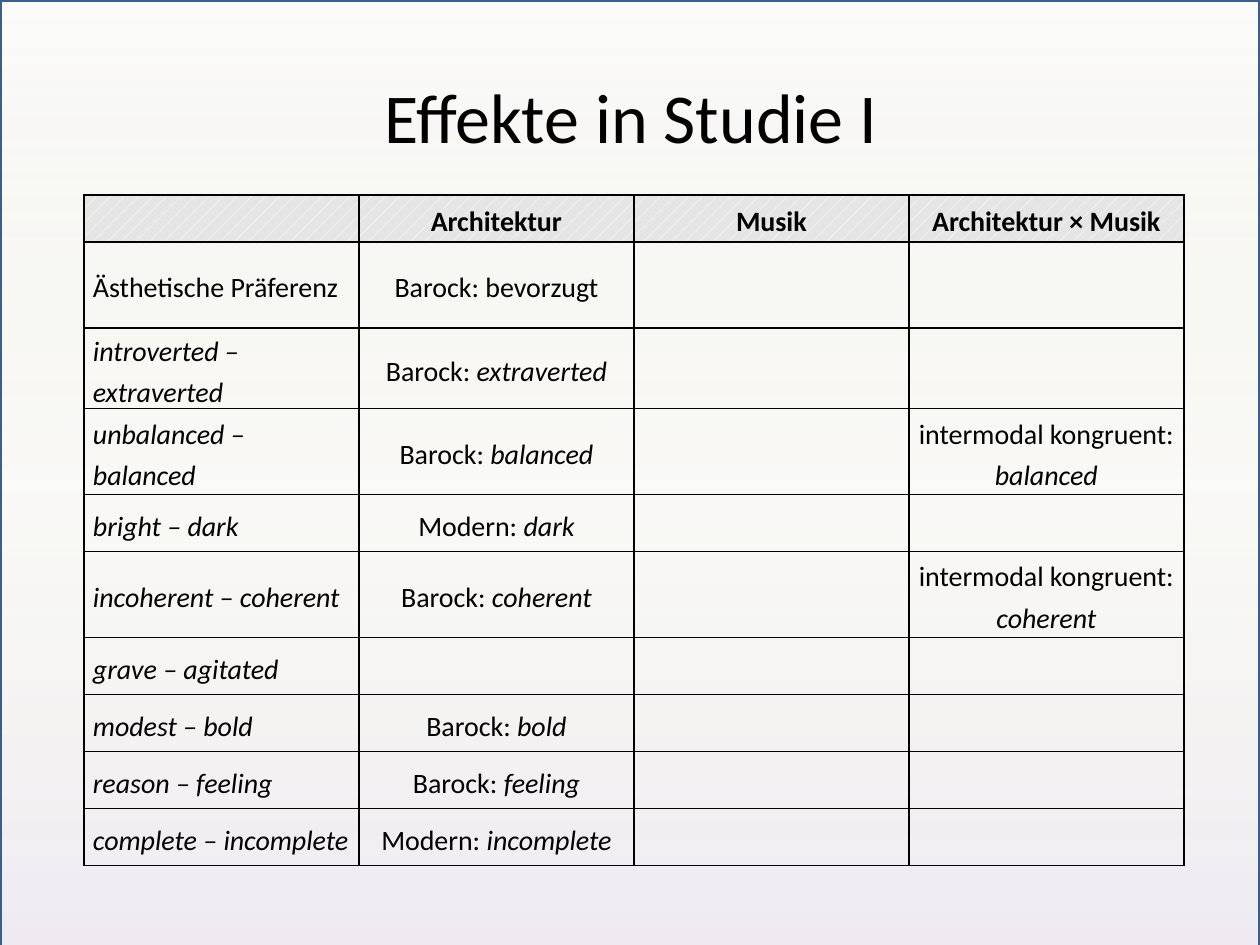
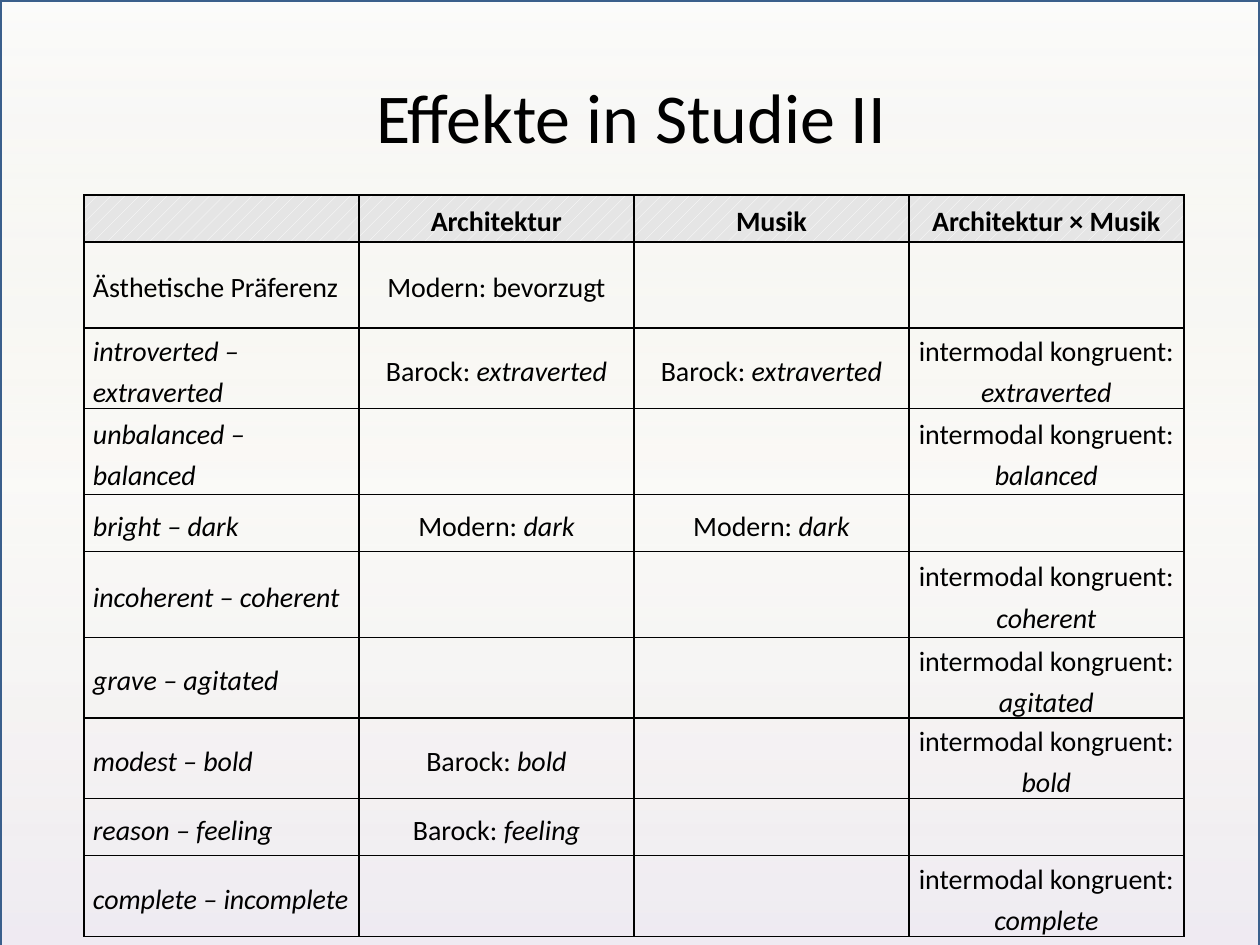
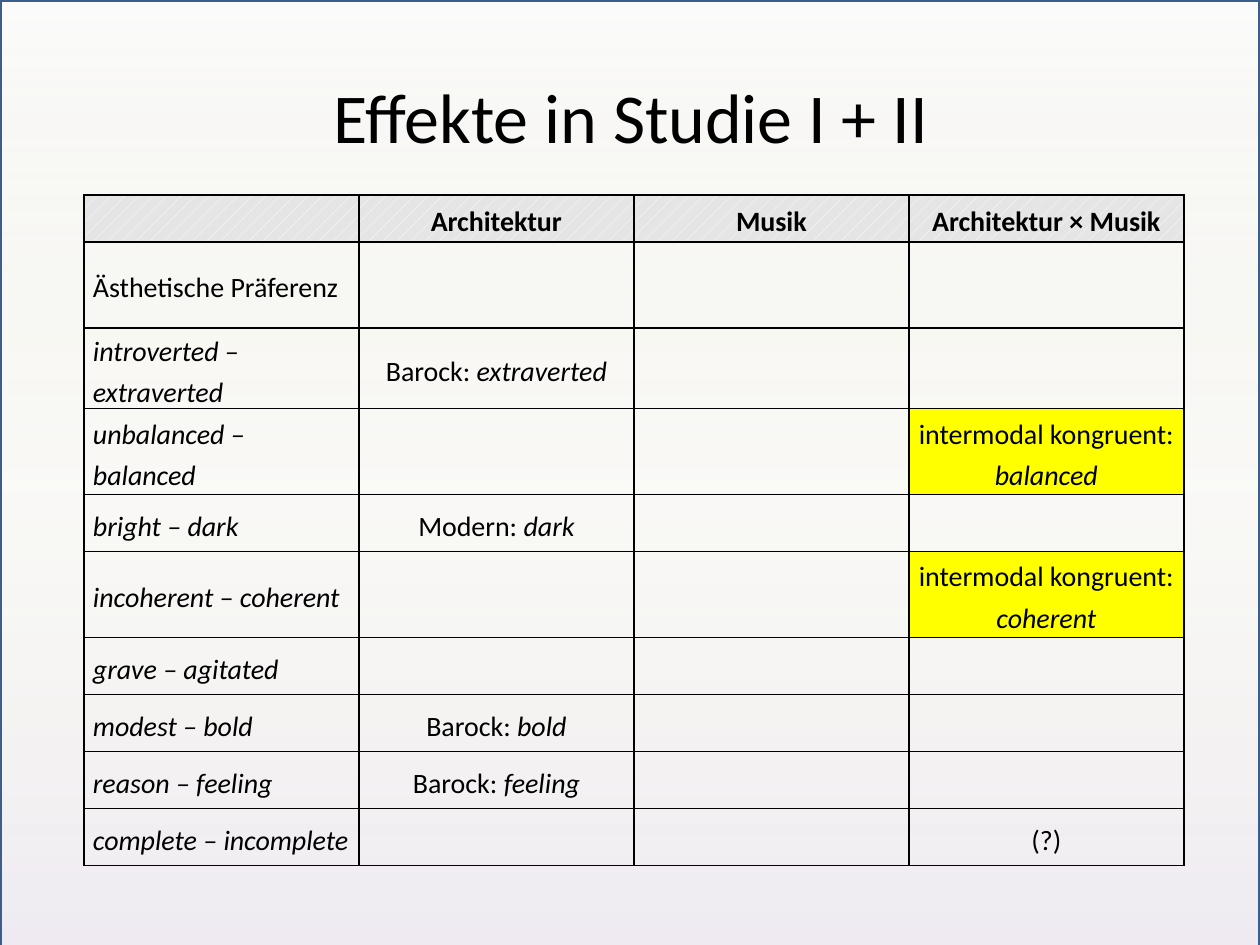
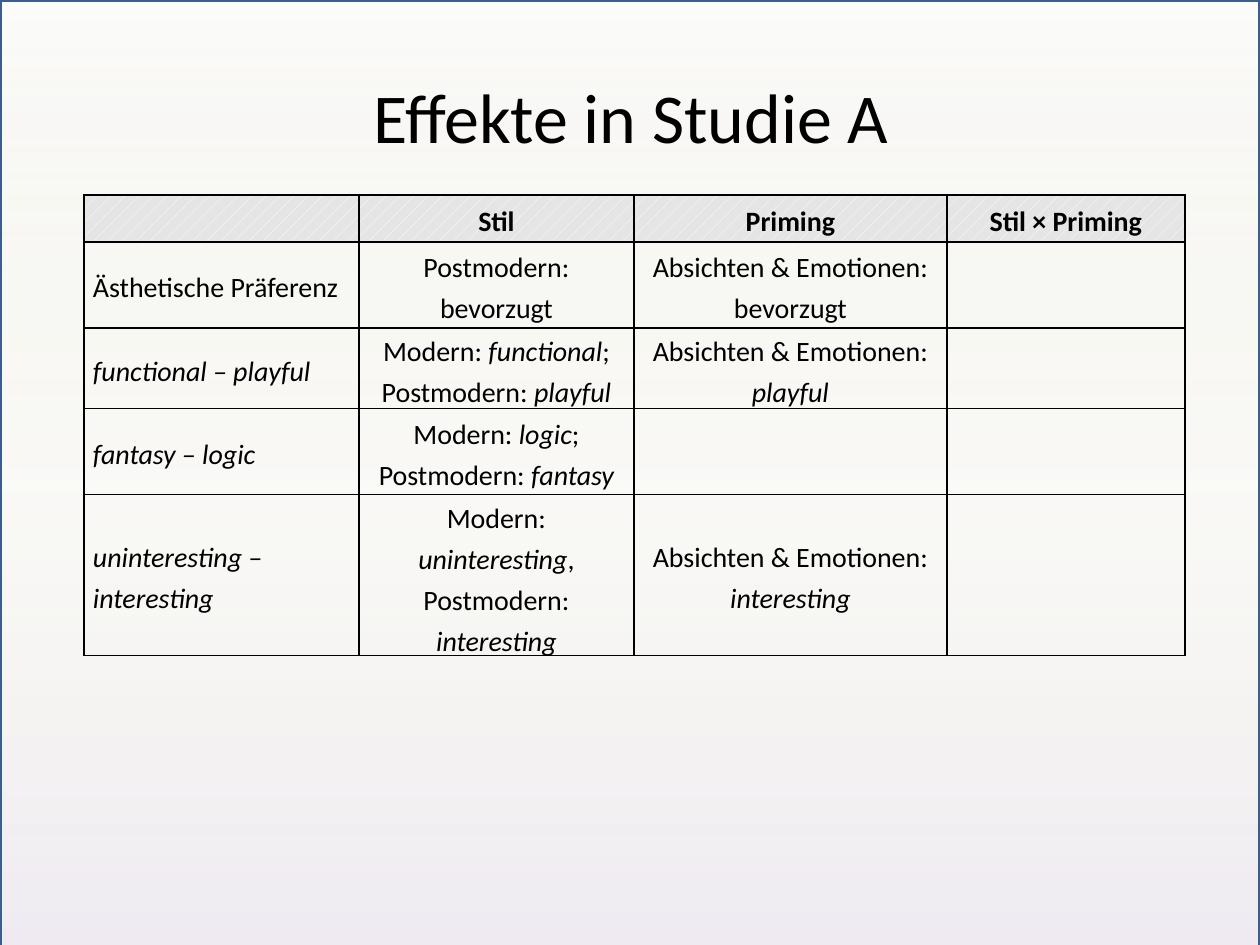
from itertools import product

from pptx import Presentation
from pptx.dml.color import RGBColor
from pptx.enum.dml import MSO_PATTERN
from pptx.enum.shapes import MSO_SHAPE
from pptx.enum.text import MSO_ANCHOR, PP_ALIGN
from pptx.oxml import parse_xml
from pptx.oxml.ns import nsdecls
from pptx.util import Pt

SCALE = 914400 / 126  # EMU per px
FONT = "Calibri"
HEX = {
    "ink": "000000", "frame": "3A5F8C", "head": "E5E5E5", "hatch": "FFFFFF",
    "mark": "FFFF00", "top": "F2F2F2", "mid": "C4BD97", "low": "B3A2C7",
}
# Position, colour and opacity of the backdrop, in percent
STOPS = [(0, "top", 30), (50, "mid", 7), (100, "low", 22)]

PAGE = (0, 0, 1260, 945)
BACK = (0, 0, 1260, 969)
TITLE = (144, 37, 974, 157)
GRID = (84, 195)
EVEN = [275] * 4
WIDE = [275, 275, 313, 238]
HEAD, TALL, LOW = 47, 86, 57

# Text between asterisks is italic
MUSIC = ["", "Architektur", "Musik", "Architektur × Musik"]
STYLE = ["", "Stil", "Priming", "Stil × Priming"]
SCALES = [
    "Ästhetische Präferenz", "*introverted – extraverted*",
    "*unbalanced – balanced*", "*bright – dark*", "*incoherent – coherent*",
    "*grave – agitated*", "*modest – bold*", "*reason – feeling*",
    "*complete – incomplete*",
]
BOTH = "intermodal kongruent: "
AIMS = "Absichten & Emotionen: "

# Effects by row number, then by column number
ONE = {
    1: {1: "Barock: bevorzugt"},
    2: {1: "Barock: *extraverted*"},
    3: {1: "Barock: *balanced*", 3: BOTH + "*balanced*"},
    4: {1: "Modern: *dark*"},
    5: {1: "Barock: *coherent*", 3: BOTH + "*coherent*"},
    7: {1: "Barock: *bold*"},
    8: {1: "Barock: *feeling*"},
    9: {1: "Modern: *incomplete*"},
}
TWO = {
    1: {1: "Modern: bevorzugt"},
    2: {1: "Barock: *extraverted*", 2: "Barock: *extraverted*",
        3: BOTH + "*extraverted*"},
    3: {3: BOTH + "*balanced*"},
    4: {1: "Modern: *dark*", 2: "Modern: *dark*"},
    5: {3: BOTH + "*coherent*"},
    6: {3: BOTH + "*agitated*"},
    7: {1: "Barock: *bold*", 3: BOTH + "*bold*"},
    8: {1: "Barock: *feeling*"},
    9: {3: BOTH + "*complete*"},
}
JOINT = {
    2: {1: "Barock: *extraverted*"},
    3: {3: BOTH + "*balanced*"},
    4: {1: "Modern: *dark*"},
    5: {3: BOTH + "*coherent*"},
    7: {1: "Barock: *bold*"},
    8: {1: "Barock: *feeling*"},
    9: {3: "(?)"},
}
PRIME = {
    1: {1: "Postmodern: bevorzugt", 2: AIMS + "bevorzugt"},
    2: {1: "Modern: *functional*; Postmodern: *playful*", 2: AIMS + "*playful*"},
    3: {1: "Modern: *logic*; Postmodern: *fantasy*"},
    4: {1: "Modern: *uninteresting*, Postmodern: *interesting*",
        2: AIMS + "*interesting*"},
}
MOODS = ["Ästhetische Präferenz", "*functional – playful*",
         "*fantasy – logic*", "*uninteresting – interesting*"]

# Title, heads, labels, effects, column widths, table height, marked cells
STUDIES = [
    ("Effekte in Studie I", MUSIC, SCALES, ONE, EVEN, 669, ()),
    ("Effekte in Studie II", MUSIC, SCALES, TWO, EVEN, 741, ()),
    ("Effekte in Studie I + II", MUSIC, SCALES, JOINT, EVEN, 669, ((3, 3), (5, 3))),
    ("Effekte in Studie A", STYLE, MOODS, PRIME, WIDE, 461, ()),
]


def px(n):
    return round(n * SCALE)


def rgb(name):
    return RGBColor.from_string(HEX[name])


def style(run, size, bold=False, slant=False):
    font = run.font
    font.name, font.size = FONT, Pt(size)
    font.bold, font.italic = bold, slant
    font.color.rgb = rgb("ink")


def backdrop(slide, box):
    rect = slide.shapes.add_shape(MSO_SHAPE.RECTANGLE, *map(px, box))
    rect.shadow.inherit = False
    rect.line.color.rgb, rect.line.width = rgb("frame"), Pt(2)
    stops = "".join(
        f'<a:gs pos="{pos * 1000}"><a:srgbClr val="{HEX[name]}">'
        f'<a:alpha val="{alpha * 1000}"/></a:srgbClr></a:gs>'
        for pos, name, alpha in STOPS)
    grad = parse_xml(f'<a:gradFill {nsdecls("a")}><a:gsLst>{stops}</a:gsLst>'
                     '<a:lin ang="5400000" scaled="0"/></a:gradFill>')
    rect.fill.background()
    old = rect._element.spPr.find(".//{*}noFill")
    old.getparent().replace(old, grad)


def heading(slide, box, text):
    frame = slide.shapes.add_textbox(*map(px, box)).text_frame
    frame.word_wrap = True
    frame.vertical_anchor = MSO_ANCHOR.MIDDLE
    frame.text = text
    para = frame.paragraphs[0]
    para.alignment = PP_ALIGN.CENTER
    style(para.runs[0], 40)


def border(cell):
    props = cell._tc.get_or_add_tcPr()
    for i, side in enumerate("LRTB"):
        props.insert(i, parse_xml(
            f'<a:ln{side} {nsdecls("a")} w="{Pt(1)}"><a:solidFill>'
            f'<a:srgbClr val="{HEX["ink"]}"/></a:solidFill></a:ln{side}>'))


def write(cell, text, bold, center):
    para = cell.text_frame.paragraphs[0]
    para.alignment = PP_ALIGN.CENTER if center else PP_ALIGN.LEFT
    para.line_spacing = 1.2
    para.space_before = para.space_after = Pt(4)
    for i, part in enumerate(text.split("*")):
        if part:
            run = para.add_run()
            run.text = part
            style(run, 16, bold, i % 2 == 1)


def paint(cell, head, mark):
    fill = cell.fill
    if head:
        fill.patterned()
        fill.pattern = MSO_PATTERN.PERCENT_10
        fill.fore_color.rgb, fill.back_color.rgb = rgb("hatch"), rgb("head")
    elif mark:
        fill.solid()
        fill.fore_color.rgb = rgb("mark")
    else:
        fill.background()


def grid(slide, spot, heads, labels, effects, widths, high, marks):
    rows, cols = len(labels) + 1, len(heads)
    box = (*spot, sum(widths), high)
    shape = slide.shapes.add_table(rows, cols, *map(px, box))
    table = shape.table
    table.first_row = table.horz_banding = False
    for col, wide in zip(table.columns, widths):
        col.width = px(wide)
    for r, row in enumerate(table.rows):
        row.height = px(HEAD if r == 0 else TALL if r in (1, 3, 5) else LOW)
    shape.height = px(high)

    for r, c in product(range(rows), range(cols)):
        cell = table.cell(r, c)
        cell.margin_left = cell.margin_right = px(9)
        cell.margin_top = cell.margin_bottom = 0
        cell.vertical_anchor = MSO_ANCHOR.MIDDLE
        paint(cell, r == 0, (r, c) in marks)
        border(cell)
        if r == 0:
            text = heads[c]
        elif c == 0:
            text = labels[r - 1]
        else:
            text = effects.get(r, {}).get(c, "")
        if text:
            write(cell, text, r == 0, c > 0)


def main():
    deck = Presentation()
    deck.slide_width, deck.slide_height = map(px, PAGE[2:])
    for title, *parts in STUDIES:
        slide = deck.slides.add_slide(deck.slide_layouts[6])
        backdrop(slide, BACK)
        heading(slide, TITLE, title)
        grid(slide, GRID, *parts)
    deck.save("out.pptx")


if __name__ == "__main__":
    main()
